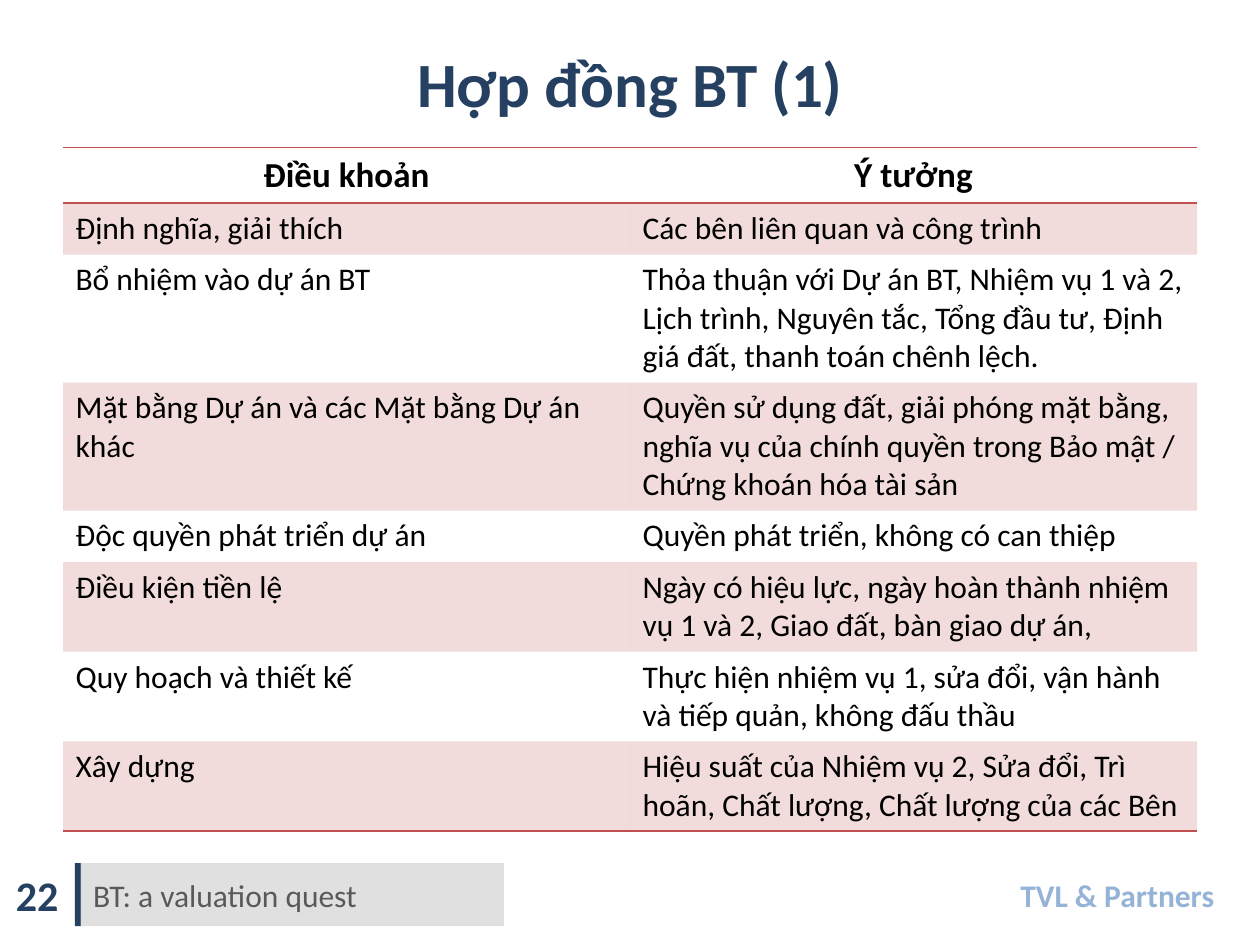
from lxml import etree
from pptx import Presentation
from pptx import util as u
from pptx.dml.color import RGBColor
from pptx.enum import shapes, text
from pptx.oxml.ns import qn

NAVY = RGBColor(0x25, 0x40, 0x61)
RED = RGBColor(0xC0, 0x50, 0x4D)
SKY = RGBColor(0x95, 0xB3, 0xD7)
GRAY = RGBColor(0xD9, 0xD9, 0xD9)
SLATE = RGBColor(0x59, 0x59, 0x59)
BLACK = RGBColor(0, 0, 0)
LEFT, MID = text.PP_ALIGN.LEFT, text.PP_ALIGN.CENTER

ROWS = [
    ("Điều khoản", "Ý tưởng"),
    ("Định nghĩa, giải thích", "Các bên liên quan và công trình"),
    ("Bổ nhiệm vào dự án BT",
     "Thỏa thuận với Dự án BT, Nhiệm vụ 1 và 2, Lịch trình, Nguyên tắc, "
     "Tổng đầu tư, Định giá đất, thanh toán chênh lệch."),
    ("Mặt bằng Dự án và các Mặt bằng Dự án khác",
     "Quyền sử dụng đất, giải phóng mặt bằng, nghĩa vụ của chính quyền "
     "trong Bảo mật / Chứng khoán hóa tài sản"),
    ("Độc quyền phát triển dự án", "Quyền phát triển, không có can thiệp"),
    ("Điều kiện tiền lệ",
     "Ngày có hiệu lực, ngày hoàn thành nhiệm vụ 1 và 2, Giao đất, "
     "bàn giao dự án,"),
    ("Quy hoạch và thiết kế",
     "Thực hiện nhiệm vụ 1, sửa đổi, vận hành và tiếp quản, không đấu thầu"),
    ("Xây dựng",
     "Hiệu suất của Nhiệm vụ 2, Sửa đổi, Trì hoãn, Chất lượng, "
     "Chất lượng của các Bên"),
]


class Deck:
    """Style and current slide; lengths are grid units, 20 across, 15 down."""
    font = "Calibri"
    cols, rows = 20, 15

    def __init__(self):
        self.prs = Presentation()
        self.prs.slide_width, self.prs.slide_height = u.Inches(10), u.Inches(7.5)
        self.unit = self.prs.slide_width // self.cols
        self.slide = self.prs.slides.add_slide(self.prs.slide_layouts[6])

    def span(self, *units):
        return [u.Emu(round(n * self.unit)) for n in units]

    def put(self, frame, words, size, color, bold=False, align=LEFT):
        para = frame.paragraphs[0]
        para.alignment = align
        run = para.add_run()
        run.text = words
        run.font.name, run.font.size = self.font, u.Pt(size)
        run.font.bold, run.font.color.rgb = bold, color

    def paint(self, fill, color, alpha=100):
        fill.solid()
        fill.fore_color.rgb = color
        if alpha < 100:
            tint = fill._xPr.find(".//" + qn("a:srgbClr"))
            etree.SubElement(tint, qn("a:alpha"), val=str(alpha * 1000))

    def label(self, box, words, size, color, align=LEFT, wrap=True):
        frame = self.slide.shapes.add_textbox(*self.span(*box)).text_frame
        frame.word_wrap = wrap
        if wrap:
            frame.vertical_anchor = text.MSO_ANCHOR.MIDDLE
        else:
            frame.auto_size = text.MSO_AUTO_SIZE.SHAPE_TO_FIT_TEXT
        self.put(frame, words, size, color, True, align)

    def bar(self, box, color, alpha=100, words=""):
        shape = self.slide.shapes.add_shape(
            shapes.MSO_SHAPE.RECTANGLE, *self.span(*box))
        shape.shadow.inherit = False
        shape.line.fill.background()
        self.paint(shape.fill, color, alpha)
        if words:
            shape.text_frame.vertical_anchor = text.MSO_ANCHOR.MIDDLE
            self.put(shape.text_frame, words, 18, SLATE)

    def edges(self, cell, sides):
        # Borders come before the fill in the cell properties
        props = cell._tc.get_or_add_tcPr()
        for i, side in enumerate("LRTB"):
            line = etree.Element(qn("a:ln" + side), w=str(u.Pt(1)))
            if side in sides:
                solid = etree.SubElement(line, qn("a:solidFill"))
                etree.SubElement(solid, qn("a:srgbClr"), val=str(RED))
            else:
                etree.SubElement(line, qn("a:noFill"))
            props.insert(i, line)

    def table(self, box, data, step):
        frame = self.slide.shapes.add_table(
            len(data), len(data[0]), *self.span(*box))
        grid = frame.table
        grid.first_row = grid.horz_banding = False
        rules = {0: "TB", 1: "T", len(data) - 1: "B"}
        for r, row in enumerate(data):
            grid.rows[r].height = self.span(step)[0]
            head = r == 0
            for c, words in enumerate(row):
                cell = grid.cell(r, c)
                if r % 2:
                    self.paint(cell.fill, RED, 20)
                else:
                    cell.fill.background()
                self.edges(cell, rules.get(r, ""))
                self.put(cell.text_frame, words, 20 if head else 18,
                         BLACK, head, MID if head else LEFT)
        frame.height = self.span(box[3])[0]


def main():
    deck = Deck()
    # Clauses and ideas
    deck.table((1, 2.34, 18, 10.68), ROWS, 0.82)
    # Title
    deck.label((6.38, 0.6, 7.24, 1.42), "Hợp đồng BT (1)", 36, NAVY, MID, False)
    # Footer: firm, accent, topic, page
    top, tall = 13.7, 1
    deck.label((16, top, 3.54, tall), "TVL & Partners", 18, SKY)
    deck.bar((1.19, top, 0.1, tall), NAVY)
    deck.bar((1.28, top, 6.72, tall), GRAY, 80, "BT: a valuation quest")
    deck.label((0, top, 1.18, tall), "22", 24, NAVY, MID)
    deck.prs.save("out.pptx")


if __name__ == "__main__":
    main()
